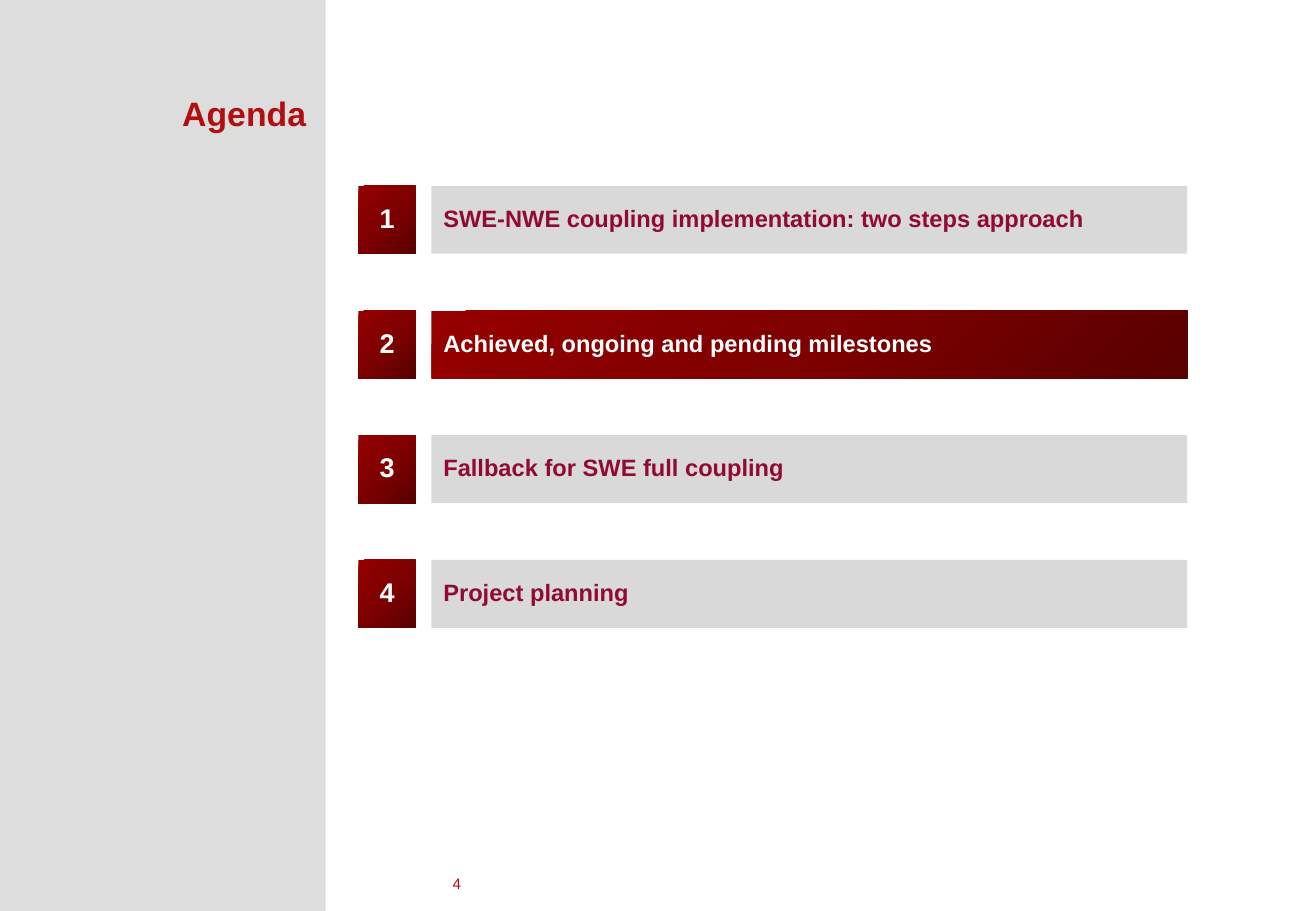
from dataclasses import dataclass

from pptx import Presentation
from pptx.dml.color import RGBColor
from pptx.enum.shapes import MSO_SHAPE
from pptx.enum.text import MSO_ANCHOR, MSO_AUTO_SIZE, PP_ALIGN
from pptx.oxml import parse_xml
from pptx.oxml.ns import nsdecls, qn
from pptx.util import Inches, Pt

TITLE = "Agenda"
PAGE_NUMBER = "4"
TOPICS = [
    "SWE-NWE coupling implementation: two steps approach",
    "Achieved, ongoing and pending milestones",
    "Fallback for SWE full coupling",
    "Project planning",
]
CURRENT_TOPIC = 2


@dataclass(frozen=True)
class Theme:
    font: str = "Arial"
    sidebar: str = "DDDDDD"
    bar: str = "D9D9D9"
    accent: str = "B20E10"
    topic: str = "900A31"
    light: str = "FFFFFF"
    gradient: tuple = ((0, "590000"), (50, "7E0000"), (100, "960000"))
    title_size: int = 20
    number_size: int = 16
    topic_size: int = 14
    page_size: int = 9


THEME = Theme()

# Lengths in inches
SLIDE_WIDTH, SLIDE_HEIGHT = 10.83, 7.5
SIDEBAR_WIDTH = 2.68
NUMBER_LEFT, NUMBER_WIDTH = 2.95, 0.47
BAR_LEFT, BAR_WIDTH = 3.55, 6.22
FIRST_ROW, LAST_ROW, ROW_HEIGHT = 1.53, 4.61, 0.56
ROW_PITCH = (LAST_ROW - FIRST_ROW) / (len(TOPICS) - 1)


def write(shape, text, size, color, align, bold=True, spacing=0.9):
    shape.text_frame.text = text
    para = shape.text_frame.paragraphs[0]
    para.alignment = align
    para.line_spacing = spacing
    para.font.name = THEME.font
    para.font.size = Pt(size)
    para.font.bold = bold
    para.font.color.rgb = RGBColor.from_string(color)


def fill_gradient(shape):
    """Fill with a radial gradient, darkest at the bottom right corner."""
    stops = "".join(
        f'<a:gs pos="{share * 1000}"><a:srgbClr val="{color}"/></a:gs>'
        for share, color in THEME.gradient
    )
    gradient = parse_xml(
        f'<a:gradFill {nsdecls("a")} rotWithShape="1"><a:gsLst>{stops}</a:gsLst>'
        '<a:path path="circle"><a:fillToRect l="100000" t="100000"/></a:path>'
        "</a:gradFill>"
    )
    shape._element.spPr.find(qn("a:prstGeom")).addnext(gradient)


def add_block(page, left, top, width, height, color=None):
    """Add a borderless rectangle; without a colour it gets the gradient."""
    block = page.shapes.add_shape(
        MSO_SHAPE.RECTANGLE, Inches(left), Inches(top), Inches(width), Inches(height)
    )
    block.shadow.inherit = False
    block.line.fill.background()
    if color:
        block.fill.solid()
        block.fill.fore_color.rgb = RGBColor.from_string(color)
    else:
        fill_gradient(block)
    block.text_frame.vertical_anchor = MSO_ANCHOR.MIDDLE
    return block


def add_title(page):
    title = page.shapes.title
    title.left, title.top = Inches(0.08), Inches(0.75)
    title.width, title.height = Inches(2.44), Inches(0.87)
    frame = title.text_frame
    frame.auto_size = MSO_AUTO_SIZE.NONE
    frame.vertical_anchor = MSO_ANCHOR.TOP
    frame.margin_left = frame.margin_right = 0
    frame.margin_top = frame.margin_bottom = Inches(0.05)
    write(title, TITLE, THEME.title_size, THEME.accent, PP_ALIGN.RIGHT)
    return title


def add_page_number(page):
    box = page.shapes.add_textbox(Inches(3.56), Inches(7.17), Inches(0.4), Inches(0.2))
    frame = box.text_frame
    frame.vertical_anchor = MSO_ANCHOR.MIDDLE
    frame.margin_left = frame.margin_right = Inches(0.04)
    frame.margin_top = frame.margin_bottom = Inches(0.04)
    write(box, PAGE_NUMBER, THEME.page_size, THEME.accent, PP_ALIGN.CENTER,
          bold=False, spacing=1.0)


def add_topic(page, number, topic):
    top = FIRST_ROW + (number - 1) * ROW_PITCH
    is_current = number == CURRENT_TOPIC
    bar = add_block(page, BAR_LEFT, top, BAR_WIDTH, ROW_HEIGHT,
                    None if is_current else THEME.bar)
    write(bar, topic, THEME.topic_size,
          THEME.light if is_current else THEME.topic, PP_ALIGN.LEFT)
    badge = add_block(page, NUMBER_LEFT, top, NUMBER_WIDTH, ROW_HEIGHT)
    badge.text_frame.word_wrap = False
    write(badge, str(number), THEME.number_size, THEME.light, PP_ALIGN.CENTER)


def main():
    deck = Presentation()
    deck.slide_width, deck.slide_height = Inches(SLIDE_WIDTH), Inches(SLIDE_HEIGHT)
    page = deck.slides.add_slide(deck.slide_layouts.get_by_name("Title Only"))

    title = add_title(page)
    sidebar = add_block(page, 0, 0, SIDEBAR_WIDTH, SLIDE_HEIGHT, THEME.sidebar)
    title._element.addprevious(sidebar._element)
    add_page_number(page)
    for number, topic in enumerate(TOPICS, start=1):
        add_topic(page, number, topic)

    deck.save("out.pptx")


if __name__ == "__main__":
    main()
